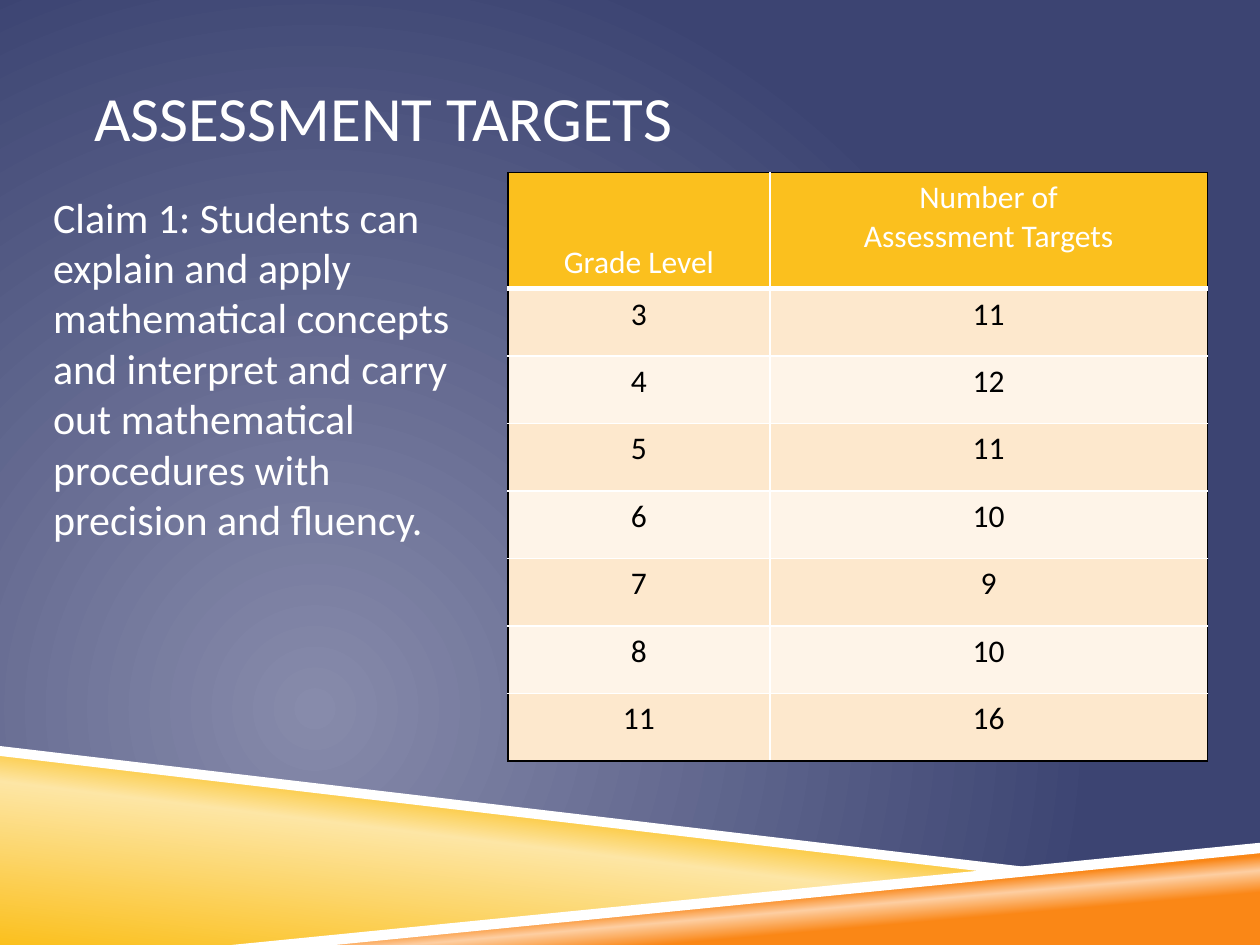
"""Builds the Assessment Targets slide."""
from dataclasses import dataclass

import pptx
import pptx.dml.color
import pptx.enum.text
import pptx.oxml
import pptx.oxml.ns
import pptx.util

Cm = pptx.util.Cm
Pt = pptx.util.Pt
RGB = pptx.dml.color.RGBColor.from_string
ALIGN = pptx.enum.text.PP_ALIGN
ANCHOR = pptx.enum.text.MSO_ANCHOR
qn = pptx.oxml.ns.qn
NS = pptx.oxml.ns.nsdecls("a")


@dataclass(frozen=True)
class Theme:
    font: str = "Calibri"
    white: str = "FFFFFF"
    black: str = "000000"
    header: str = "FBC01E"
    band_dark: str = "FDE8CD"
    band_light: str = "FEF4E8"
    backdrop: tuple = ((0, "878BAB"), (100, "3C4472"))
    yellow: tuple = ((0, "FBC01E"), (52, "FDE6A5"), (66, "FBC01E"))
    orange: tuple = ((28, "FA8716"), (40, "FDCFA2"), (48, "FA8716"))
    title_size: int = 36
    body_size: int = 24
    table_size: int = 18


T = Theme()
CLAIM = ("Claim 1: Students can explain and apply mathematical concepts and interpret "
         "and carry out mathematical procedures with precision and fluency.")
HEADERS = (("Grade Level",), ("Number of", "Assessment Targets"))
TARGETS = ((3, 11), (4, 12), (5, 11), (6, 10), (7, 9), (8, 10), (11, 16))


def set_gradient(fill, parent, stops, direction):
    """Give a fill gradient stops and a linear or path direction."""
    fill.gradient()
    grad = next(parent.iter(qn("a:gradFill")))
    grad.clear()
    grad.set("rotWithShape", "1")
    gs = "".join(f'<a:gs pos="{pos * 1000}"><a:srgbClr val="{color}"/></a:gs>'
                 for pos, color in stops)
    grad.append(pptx.oxml.parse_xml(f"<a:gsLst {NS}>{gs}</a:gsLst>"))
    grad.append(pptx.oxml.parse_xml(direction))


def set_background(s):
    """Fill the slide with a circular glow from the lower left."""
    set_gradient(s.background.fill, s._element, T.backdrop,
                 f'<a:path {NS} path="circle"><a:fillToRect l="50000" t="100000" '
                 'r="100000" b="50000"/></a:path>')


def add_polygon(s, points):
    """Add a closed, unlined outline through points in centimetres."""
    start, *rest = [(Cm(x), Cm(y)) for x, y in points]
    builder = s.shapes.build_freeform(*start)
    builder.add_line_segments(rest)
    sp = builder.convert_to_shape()
    sp.shadow.inherit = False
    sp.line.fill.background()
    return sp


def add_wedge(s, points, stops, angle):
    """Add a corner wedge with a linear gradient."""
    sp = add_polygon(s, points)
    set_gradient(sp.fill, sp._element.spPr, stops,
                 f'<a:lin {NS} ang="{angle * 60000}" scaled="0"/>')


def add_stripe(s, points):
    """Add a plain white stripe."""
    sp = add_polygon(s, points)
    sp.fill.solid()
    sp.fill.fore_color.rgb = RGB(T.white)


def add_run(p, text, size, color):
    """Add a styled run to a paragraph."""
    r = p.add_run()
    r.text = text
    r.font.name = T.font
    r.font.size = Pt(size)
    r.font.bold = False
    r.font.color.rgb = RGB(color)


def add_text(s, box, text, size, anchor):
    """Add a wrapping white text box without side insets."""
    tf = s.shapes.add_textbox(*map(Cm, box)).text_frame
    tf.word_wrap = True
    tf.margin_left = tf.margin_right = 0
    tf.vertical_anchor = anchor
    add_run(tf.paragraphs[0], text, size, T.white)


def set_border(cell, side, color, width):
    """Draw one side of a cell."""
    cell._tc.get_or_add_tcPr().append(pptx.oxml.parse_xml(
        f'<a:ln{side} {NS} w="{Pt(width)}"><a:solidFill><a:srgbClr val="{color}"/>'
        f'</a:solidFill></a:ln{side}>'))


def fill_cell(cell, lines, color, fill, outer, rule):
    """Write centred lines in a cell, with black borders on its outer sides."""
    p = cell.text_frame.paragraphs[0]
    p.alignment = ALIGN.CENTER
    for i, line in enumerate(lines):
        if i:
            p.add_line_break()
        add_run(p, line, T.table_size, color)
    for side in "LRTB":
        edge = side in outer
        width = rule.get(side, 1)
        set_border(cell, side, T.black if edge else T.white, 1 if edge else width)
    cell.fill.solid()
    cell.fill.fore_color.rgb = RGB(fill)


def add_target_table(s):
    """Add the table of target counts by grade."""
    rows = [HEADERS] + [[(str(v),) for v in row] for row in TARGETS]
    last = len(rows) - 1
    tbl = s.shapes.add_table(len(rows), 2, Cm(10.24), Cm(3.48), Cm(14.1), Cm(11.84)).table
    for col, width in zip(tbl.columns, (5.28, 8.82)):
        col.width = Cm(width)
    for i, row in enumerate(rows):
        tbl.rows[i].height = Cm(1.36 if i else 2.34)
        fill = (T.band_dark if i % 2 else T.band_light) if i else T.header
        for j, lines in enumerate(row):
            outer = "LR"[j] + ("T" if i == 0 else "") + ("B" if i == last else "")
            rule = {"B": 3} if i == 0 else {"T": 3} if i == 1 else {}
            fill_cell(tbl.cell(i, j), lines, T.black if i else T.white, fill, outer, rule)
    tbl.cell(0, 0).vertical_anchor = ANCHOR.BOTTOM


def main():
    """Build and save the slide."""
    prs = pptx.Presentation()
    prs.slide_width, prs.slide_height = Cm(25.4), Cm(19.05)
    s = prs.slides.add_slide(prs.slide_layouts[6])
    set_background(s)
    add_wedge(s, ((0, 15.16), (20.12, 17.58), (5.08, 19.05), (0, 19.05)), T.yellow, 277)
    add_wedge(s, ((5.03, 19.05), (25.4, 17.07), (25.4, 19.05)), T.orange, 265)
    add_stripe(s, ((0, 15.04), (0, 15.24), (20.07, 17.6), (21.13, 17.53)))
    add_stripe(s, ((25.4, 16.99), (4.67, 19.05), (6.76, 19.05), (25.4, 17.2)))
    add_text(s, (1.9, 0.76, 21.6, 3.18), "ASSESSMENT TARGETS", T.title_size, ANCHOR.MIDDLE)
    add_text(s, (1.07, 3.73, 8.76, 11.58), CLAIM, T.body_size, ANCHOR.TOP)
    add_target_table(s)
    prs.save("out.pptx")


if __name__ == "__main__":
    main()
